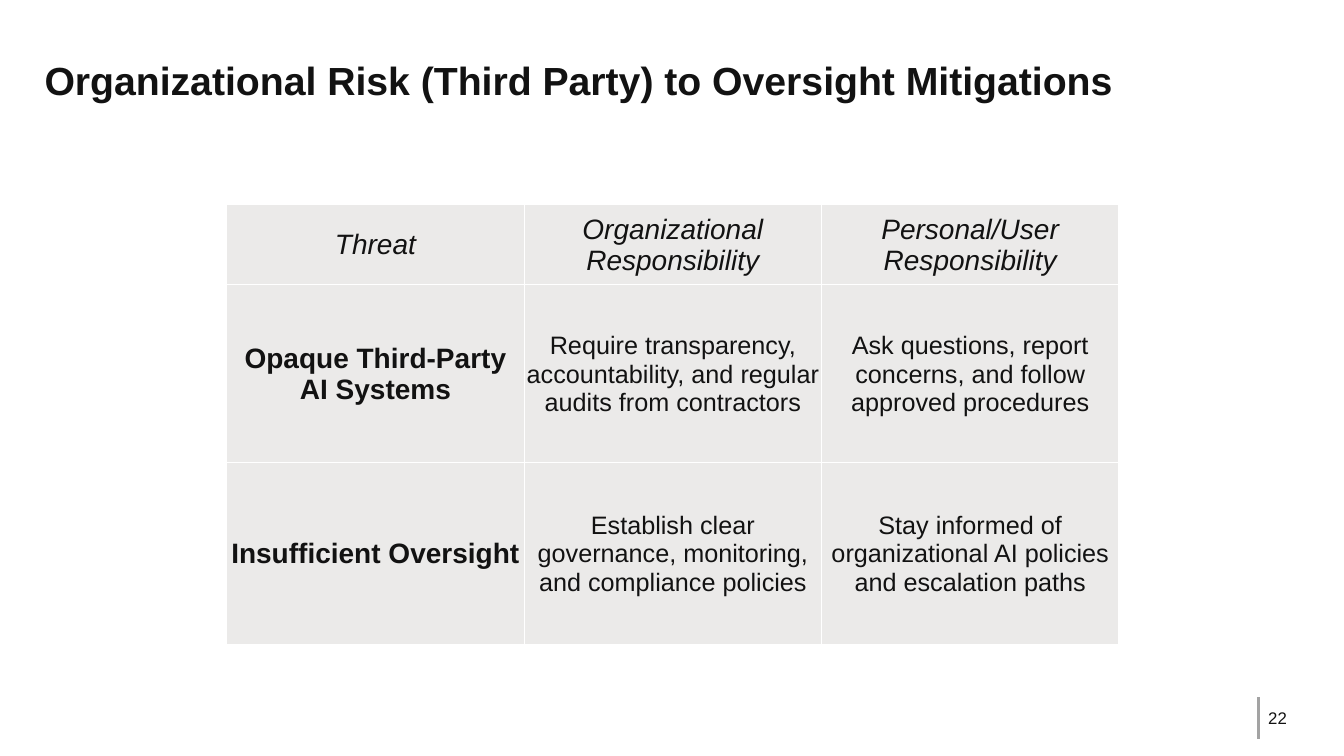
from lxml.etree import SubElement
from pptx import Presentation
from pptx.dml.color import RGBColor
from pptx.enum.shapes import MSO_CONNECTOR
from pptx.enum.text import MSO_ANCHOR, MSO_AUTO_SIZE, PP_ALIGN
from pptx.oxml.ns import qn
from pptx.util import Inches, Pt

INK = RGBColor(0x12, 0x12, 0x12)
RULE_GRAY = RGBColor(0xA3, 0xA3, 0xA3)
CELL_GRAY = RGBColor(0xEB, 0xEA, 0xE9)
WHITE = RGBColor(0xFF, 0xFF, 0xFF)

HEADINGS = ["Threat", "Organizational Responsibility", "Personal/User Responsibility"]
MITIGATIONS = [
    [
        "Opaque Third-Party AI Systems",
        "Require transparency, accountability, and regular audits from contractors",
        "Ask questions, report concerns, and follow approved procedures",
    ],
    [
        "Insufficient Oversight",
        "Establish clear governance, monitoring, and compliance policies",
        "Stay informed of organizational AI policies and escalation paths",
    ],
]


class RiskSlide:
    font_name = "Arial"
    grid_columns = 160
    grid_rows = 90

    def __init__(self, presentation):
        self.column = presentation.slide_width / self.grid_columns
        self.row = presentation.slide_height / self.grid_rows
        self.slide = presentation.slides.add_slide(presentation.slide_layouts[5])

    def across(self, columns):
        return round(columns * self.column)

    def down(self, rows):
        return round(rows * self.row)

    def box(self, left, top, width, height):
        return self.across(left), self.down(top), self.across(width), self.down(height)

    def add_text(self, frame, text, size, align=PP_ALIGN.LEFT, bold=False, italic=False):
        frame.word_wrap = True
        paragraph = frame.paragraphs[0]
        paragraph.alignment = align
        run = paragraph.add_run()
        run.text = text
        run.font.name = self.font_name
        run.font.size = Pt(size)
        run.font.bold = bold
        run.font.italic = italic
        run.font.color.rgb = INK

    def title(self, text, *place):
        shape = self.slide.shapes.title
        shape.left, shape.top, shape.width, shape.height = self.box(*place)
        frame = shape.text_frame
        frame.auto_size = MSO_AUTO_SIZE.NONE
        frame.vertical_anchor = MSO_ANCHOR.MIDDLE
        self.add_text(frame, text, 28, bold=True)

    def page_number(self, text, *place):
        frame = self.slide.shapes.add_textbox(*self.box(*place)).text_frame
        frame.vertical_anchor = MSO_ANCHOR.MIDDLE
        self.add_text(frame, text, 12)

    def vertical_rule(self, left, top, bottom):
        line = self.slide.shapes.add_connector(
            MSO_CONNECTOR.STRAIGHT,
            self.across(left), self.down(top), self.across(left), self.down(bottom),
        )
        line.line.color.rgb = RULE_GRAY
        line.line.width = Pt(2)
        SubElement(line._element.spPr, qn("a:effectLst"))

    def border(self, cell):
        properties = cell._tc.get_or_add_tcPr()
        for side in ("a:lnL", "a:lnR", "a:lnT", "a:lnB"):
            edge = SubElement(properties, qn(side), w=str(Pt(1)))
            fill = SubElement(edge, qn("a:solidFill"))
            SubElement(fill, qn("a:srgbClr"), val=str(WHITE))

    def cell(self, cell, text, size, bold, italic):
        cell.margin_left = cell.margin_right = cell.margin_top = Inches(0.01)
        cell.margin_bottom = 0
        cell.vertical_anchor = MSO_ANCHOR.MIDDLE
        self.border(cell)
        cell.fill.solid()
        cell.fill.fore_color.rgb = CELL_GRAY
        self.add_text(cell.text_frame, text, size, PP_ALIGN.CENTER, bold, italic)

    def table(self, records, left, top, column_width, row_heights):
        count = len(records[0])
        place = self.box(left, top, column_width * count, sum(row_heights))
        table = self.slide.shapes.add_table(len(records), count, *place).table
        table.first_row = table.horz_banding = False
        for column in table.columns:
            column.width = self.across(column_width)
        for row_index, record in enumerate(records):
            table.rows[row_index].height = self.down(row_heights[row_index])
            heading = row_index == 0
            for column_index, text in enumerate(record):
                threat = column_index == 0
                self.cell(
                    table.cell(row_index, column_index),
                    text,
                    size=20 if heading or threat else 18,
                    bold=threat and not heading,
                    italic=heading,
                )


def main():
    presentation = Presentation()
    presentation.slide_width = Inches(13.33)
    presentation.slide_height = Inches(7.5)
    risk = RiskSlide(presentation)
    risk.page_number("22", 149.8, 83.8, 6.2, 3.2)
    risk.vertical_rule(149.8, 83, 88)
    risk.title("Organizational Risk (Third Party) to Oversight Mitigations", 4.1, 4.1, 151.8, 10.7)
    risk.table([HEADINGS] + MITIGATIONS, 27, 24.3, 35.4, [9.6, 21.2, 21.6])
    presentation.save("out.pptx")


if __name__ == "__main__":
    main()
